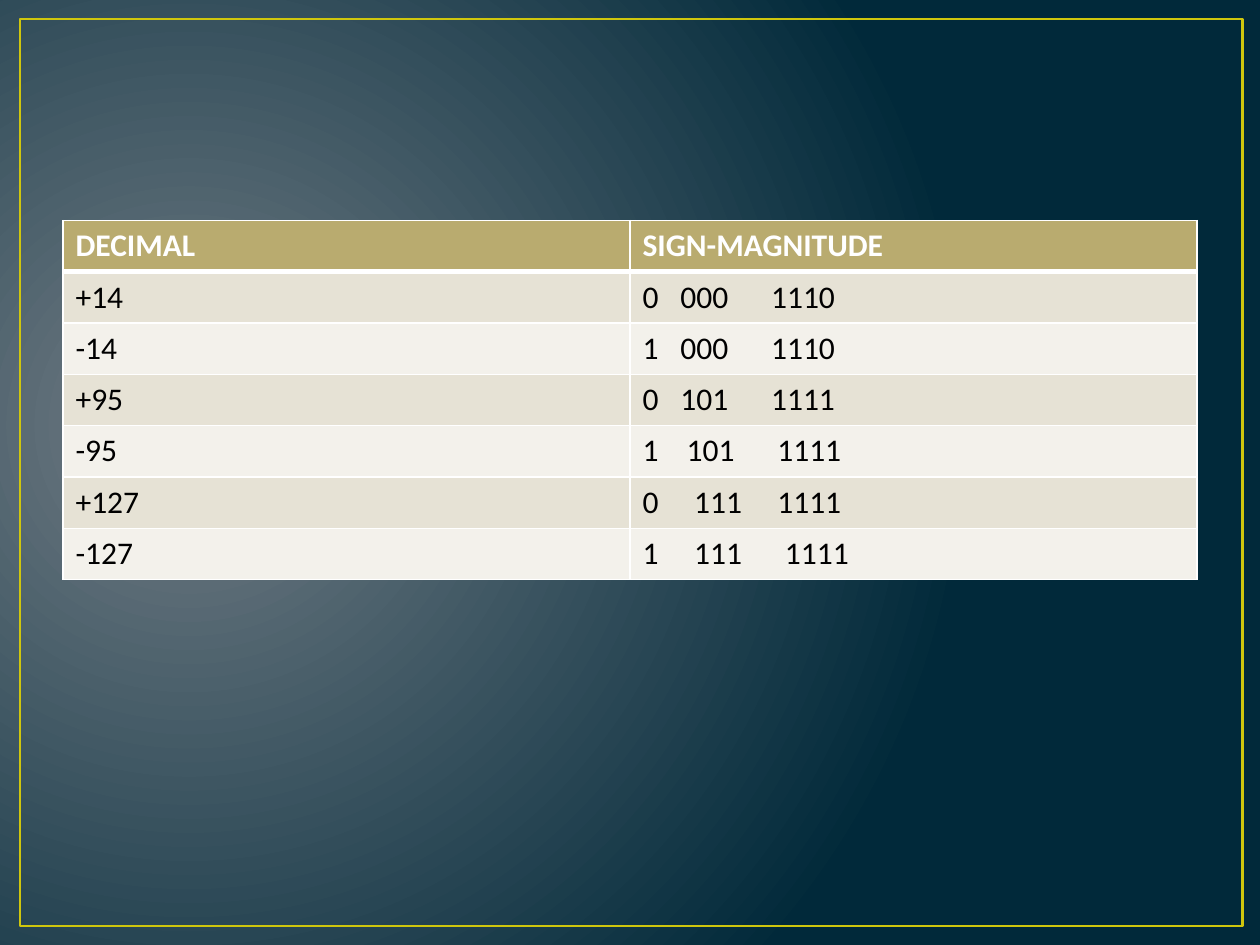
"""Build a slide with a table of sign-magnitude binary numbers."""
from dataclasses import dataclass

from lxml import etree
from pptx import Presentation
from pptx import util as u
from pptx.dml.color import RGBColor
from pptx.enum import shapes
from pptx.oxml.ns import qn


@dataclass(frozen=True)
class Theme:
    font: str = "Calibri"
    size: int = 18
    glow: str = "717C84"
    night: str = "01293A"
    frame: str = "CFC60D"
    header: str = "B9AB6F"
    bands: tuple = ("E6E2D5", "F3F1EB")
    light: str = "FFFFFF"
    dark: str = "000000"


theme = Theme()
header = ("DECIMAL", "SIGN-MAGNITUDE")
numbers = [
    ("+14", "0\t000\t1110", (0.3, 1.02)),
    ("-14", "1\t000\t1110", (0.3, 1.02)),
    ("+95", "0\t101\t1111", (0.3, 1.02)),
    ("-95", "1\t101\t1111", (0.35, 1.07)),
    ("+127", "0\t111\t1111", (0.41, 1.07)),
    ("-127", "1\t111\t1111", (0.41, 1.13)),
]


def add_border(cell, side, position, points):
    properties = cell._tc.get_or_add_tcPr()
    line = etree.Element(qn(f"a:ln{side}"), w=str(u.Pt(points)))
    fill = etree.SubElement(line, qn("a:solidFill"))
    etree.SubElement(fill, qn("a:srgbClr"), val=theme.light)
    properties.insert(position, line)


def write_cell(cell, content, fill, color, bold, stops):
    cell.fill.solid()
    cell.fill.fore_color.rgb = RGBColor.from_string(fill)
    paragraph = cell.text_frame.paragraphs[0]
    if stops:
        tabs = etree.SubElement(paragraph._p.get_or_add_pPr(), qn("a:tabLst"))
        for stop in stops:
            etree.SubElement(tabs, qn("a:tab"), pos=str(u.Inches(stop)), algn="l")
    run = paragraph.add_run()
    run.text = content
    run.font.name = theme.font
    run.font.size = u.Pt(theme.size)
    run.font.bold = bold
    run.font.color.rgb = RGBColor.from_string(color)


presentation = Presentation()
presentation.slide_width = u.Inches(10)
presentation.slide_height = u.Inches(7.5)
width, height = presentation.slide_width, presentation.slide_height
slide = presentation.slides.add_slide(presentation.slide_layouts[6])

background = slide.background.fill
background.gradient()
for stop, color in zip(background.gradient_stops, (theme.glow, theme.night)):
    stop.color.rgb = RGBColor.from_string(color)
gradient = slide.element.find(".//" + qn("a:gradFill"))
gradient.remove(gradient.find(qn("a:lin")))
circle = etree.Element(qn("a:path"))
circle.set("path", "circle")
etree.SubElement(circle, qn("a:fillToRect"), l="15000", t="50000", r="85000", b="60000")
gradient.find(qn("a:gsLst")).addnext(circle)

frame = slide.shapes.add_shape(
    shapes.MSO_SHAPE.RECTANGLE,
    int(width * 0.016), int(height * 0.02), int(width * 0.97), int(height * 0.96),
)
frame.shadow.inherit = False
frame.fill.background()
frame.line.color.rgb = RGBColor.from_string(theme.frame)
frame.line.width = u.Pt(1.5)

rows = [(*header, ())] + numbers
table = slide.shapes.add_table(
    len(rows), len(header),
    int(width * 0.05), int(height * 0.7 / 3), int(width * 0.9), int(height * 0.38),
).table
table.horz_banding = False

for row, (decimal, binary, stops) in enumerate(rows):
    is_header = row == 0
    fill = theme.header if is_header else theme.bands[(row - 1) % 2]
    color = theme.light if is_header else theme.dark
    for column, content in enumerate((decimal, binary)):
        cell = table.cell(row, column)
        write_cell(cell, content, fill, color, is_header, stops if column else ())
        weights = {"L": 1, "R": 1, "T": 3 if row == 1 else 1, "B": 3 if is_header else 1}
        for position, (side, points) in enumerate(weights.items()):
            add_border(cell, side, position, points)

presentation.save("out.pptx")
